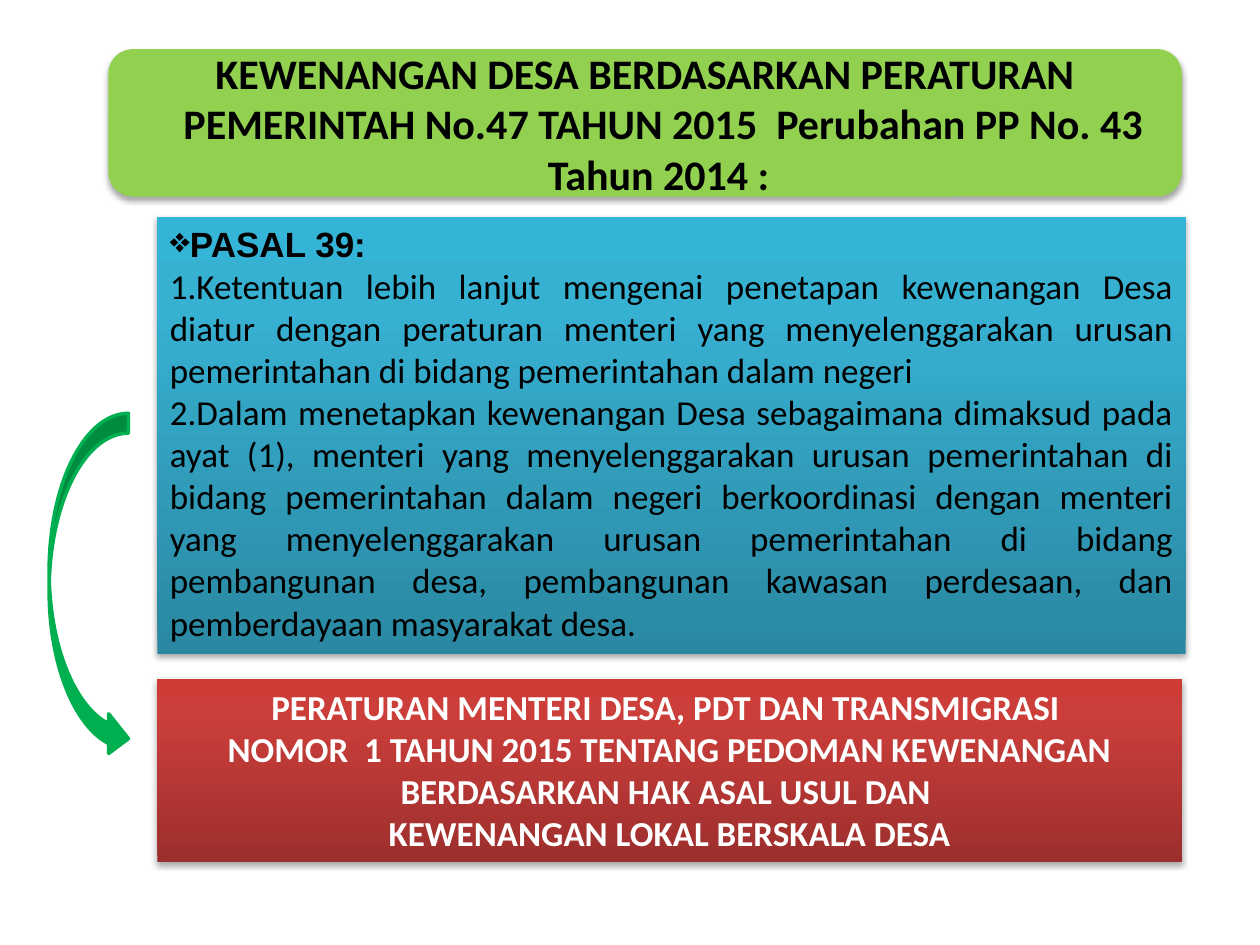
from dataclasses import dataclass
from typing import Optional

import lxml.etree
import pptx
import pptx.dml.color
import pptx.enum.shapes
import pptx.enum.text
import pptx.oxml
import pptx.oxml.ns
import pptx.util

Color = pptx.dml.color.RGBColor
Align = pptx.enum.text.PP_ALIGN
Anchor = pptx.enum.text.MSO_ANCHOR
Preset = pptx.enum.shapes.MSO_SHAPE
qn = pptx.oxml.ns.qn

BLACK = Color(0x00, 0x00, 0x00)
WHITE = Color(0xFF, 0xFF, 0xFF)
LIME = Color(0x92, 0xD0, 0x50)
GREEN = Color(0x00, 0xB0, 0x50)
BLUES = (Color(0x2A, 0x88, 0xA2), Color(0x37, 0xB1, 0xD2), Color(0x34, 0xB4, 0xD6))
REDS = (Color(0x9C, 0x2F, 0x2D), Color(0xCB, 0x3E, 0x3A), Color(0xCE, 0x3B, 0x37))
GRADIENT_POSITIONS = (0, 80, 100)

SLIDE_WIDTH = pptx.util.Inches(10)
SLIDE_HEIGHT = pptx.util.Inches(7.5)


@dataclass(frozen=True)
class Area:
    """A rectangle in percent of the slide's width and height."""
    left: float
    top: float
    width: float
    height: float


@dataclass(frozen=True)
class Line:
    text: str
    size: int = 20
    font: str = "Calibri"
    color: Color = BLACK
    bold: bool = True
    align: Align = Align.CENTER
    level: int = 0
    margin: float = 0
    indent: float = 0
    bullet: Optional[tuple[str, str, str]] = None  # tag, attribute, value


@dataclass(frozen=True)
class Panel:
    preset: Preset
    area: Area
    fill: Color | tuple[Color, ...]
    lines: tuple[Line, ...]
    anchor: Anchor = Anchor.TOP
    grows: bool = True


def article_clause(text: str) -> Line:
    return Line(text, bold=False, align=Align.JUSTIFY, level=1, indent=-0.5,
                bullet=("a:buAutoNum", "type", "arabicPeriod"))


def decree_line(text: str) -> Line:
    return Line(text, color=WHITE)


PANELS = (
    Panel(Preset.RECTANGLE, Area(12.5, 22.93, 81.6, 46.27), BLUES, (
        Line("PASAL 39:", font="Arial", align=Align.LEFT, indent=-0.31,
             bullet=("a:buChar", "char", "❖")),
        article_clause(
            "Ketentuan lebih lanjut mengenai penetapan kewenangan Desa diatur dengan "
            "peraturan menteri yang menyelenggarakan urusan pemerintahan di bidang "
            "pemerintahan dalam negeri"),
        article_clause(
            "Dalam menetapkan kewenangan Desa sebagaimana dimaksud pada ayat (1), menteri "
            "yang menyelenggarakan urusan pemerintahan di bidang pemerintahan dalam negeri "
            "berkoordinasi dengan menteri yang menyelenggarakan urusan pemerintahan di "
            "bidang pembangunan desa, pembangunan kawasan perdesaan, dan pemberdayaan "
            "masyarakat desa. "),
    )),
    Panel(Preset.ROUNDED_RECTANGLE, Area(8.6, 5.2, 85.2, 15.6), LIME, (
        Line("KEWENANGAN DESA BERDASARKAN PERATURAN PEMERINTAH No.47 TAHUN 2015  "
             "Perubahan PP No. 43 Tahun 2014 : ", size=24, margin=0.29, indent=-0.29),
    ), anchor=Anchor.MIDDLE, grows=False),
    Panel(Preset.RECTANGLE, Area(12.5, 71.87, 81.3, 19.33), REDS, (
        decree_line("PERATURAN MENTERI DESA, PDT DAN TRANSMIGRASI "),
        decree_line("NOMOR  1 TAHUN 2015 TENTANG PEDOMAN KEWENANGAN"),
        decree_line("BERDASARKAN HAK ASAL USUL DAN "),
        decree_line("KEWENANGAN LOKAL BERSKALA DESA"),
    )),
)
ARROW_AREA = Area(3.9, 43.73, 6.3, 36.53)


def set_attributes(target, values: dict) -> None:
    for name, value in values.items():
        setattr(target, name, value)


def add_preset(slide, preset: Preset, area: Area):
    shape = slide.shapes.add_shape(
        preset,
        round(SLIDE_WIDTH * area.left / 100), round(SLIDE_HEIGHT * area.top / 100),
        round(SLIDE_WIDTH * area.width / 100), round(SLIDE_HEIGHT * area.height / 100))
    shape.shadow.inherit = False
    return shape


def fill_solid(shape, color: Color) -> None:
    shape.fill.solid()
    shape.fill.fore_color.rgb = color


def fill_gradient(shape, colors: tuple[Color, ...]) -> None:
    """Fill from the bottom edge up, with one colour per gradient position."""
    stops = "".join(
        f'<a:gs pos="{position * 1000}"><a:srgbClr val="{color}"/></a:gs>'
        for position, color in zip(GRADIENT_POSITIONS, colors))
    gradient = pptx.oxml.parse_xml(
        f'<a:gradFill {pptx.oxml.ns.nsdecls("a")} rotWithShape="1"><a:gsLst>{stops}</a:gsLst>'
        '<a:lin ang="16200000" scaled="0"/></a:gradFill>')
    shape._element.spPr.find(qn("a:prstGeom")).addnext(gradient)


def add_shadow(shape) -> None:
    shape._element.spPr.find(qn("a:effectLst")).append(pptx.oxml.parse_xml(
        f'<a:outerShdw {pptx.oxml.ns.nsdecls("a")} blurRad="40000" dist="23000" dir="5400000" '
        'rotWithShape="0"><a:srgbClr val="000000"><a:alpha val="35000"/></a:srgbClr>'
        '</a:outerShdw>'))


def write_line(paragraph, line: Line) -> None:
    set_attributes(paragraph, {"alignment": line.align, "level": line.level})
    properties = paragraph._p.get_or_add_pPr()
    properties.set("marL", str(pptx.util.Inches(line.margin)))
    properties.set("indent", str(pptx.util.Inches(line.indent)))
    tag, attribute, value = line.bullet or ("a:buNone", "", "")
    bullet = lxml.etree.SubElement(properties, qn(tag))
    if attribute:
        bullet.set(attribute, value)
    run = paragraph.add_run()
    run.text = line.text
    set_attributes(run.font, {"name": line.font, "size": pptx.util.Pt(line.size),
                              "bold": line.bold})
    run.font.color.rgb = line.color


def add_panel(slide, panel: Panel) -> None:
    shape = add_preset(slide, panel.preset, panel.area)
    if isinstance(panel.fill, Color):
        fill_solid(shape, panel.fill)
    else:
        fill_gradient(shape, panel.fill)
    shape.line.fill.background()
    add_shadow(shape)
    sizing = pptx.enum.text.MSO_AUTO_SIZE
    frame = shape.text_frame
    set_attributes(frame, {
        "word_wrap": True,
        "vertical_anchor": panel.anchor,
        "auto_size": sizing.SHAPE_TO_FIT_TEXT if panel.grows else sizing.NONE,
    })
    for index, line in enumerate(panel.lines):
        write_line(frame.add_paragraph() if index else frame.paragraphs[0], line)


def add_curved_arrow(slide, area: Area) -> None:
    arrow = add_preset(slide, Preset.CURVED_RIGHT_ARROW, area)
    fill_solid(arrow, GREEN)
    arrow.line.color.rgb = GREEN
    arrow.line.width = pptx.util.Pt(2)


def main() -> None:
    presentation = pptx.Presentation()
    set_attributes(presentation, {"slide_width": SLIDE_WIDTH, "slide_height": SLIDE_HEIGHT})
    slide = presentation.slides.add_slide(presentation.slide_layouts[6])
    for panel in PANELS:
        add_panel(slide, panel)
    add_curved_arrow(slide, ARROW_AREA)
    presentation.save("out.pptx")


if __name__ == "__main__":
    main()
